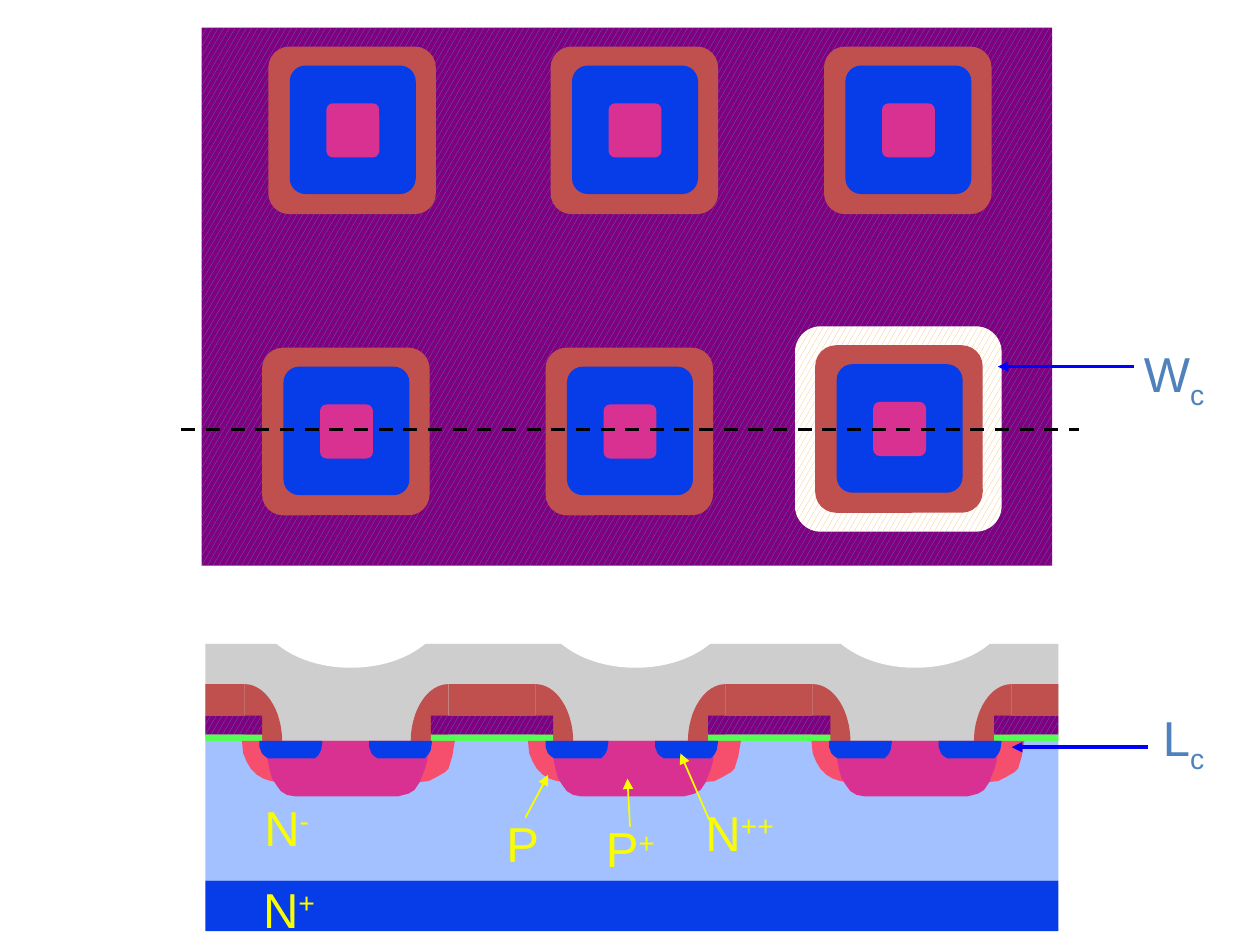
from math import cos, pi, sin

from lxml.etree import SubElement
from pptx import Presentation
from pptx.dml.color import RGBColor
from pptx.enum.dml import MSO_LINE, MSO_PATTERN
from pptx.enum.shapes import MSO_CONNECTOR, MSO_SHAPE
from pptx.enum.text import MSO_AUTO_SIZE
from pptx.oxml.ns import qn
from pptx.util import Inches, Pt

# The slide is a grid of 100 columns by 75 rows
COLUMNS, ROWS = 100, 75
WIDTH, HEIGHT = Inches(10), Inches(7.5)

OXIDE, POLY, POLY_SPECK = "C0504D", "800080", "4F81BD"
BLUE, PINK, BODY, GATE_OXIDE = "063DE8", "D93192", "F64F6D", "52FF52"
EPITAXY, METAL, WHITE = "A2C1FE", "CECECE", "FFFFFF"
YELLOW, STEEL, ARROW_BLUE = "FAFD00", "4F81BD", "0000FF"

SURFACE = 58.8  # row of the silicon surface
SPACER = 3  # columns of a rounded oxide edge
SPACER_OVERLAP = 1.4  # columns of that edge that lie above the gate

# Outlines of the diffusions, from their top left corner
BODY_OUTLINE = [(0, 0), (0.1, 1), (0.4, 1.7), (0.7, 2.2), (1.2, 2.7), (1.7, 3),
                (2.3, 3.2), (3.1, 3.3), (13.7, 3.3), (14.8, 3.2), (15.4, 2.9),
                (16.1, 2.5), (16.4, 2.2), (16.7, 1.2), (16.8, 0.6), (16.9, 0)]
DEEP_OUTLINE = [(0, 0), (0.1, 1.3), (0.3, 2.3), (0.5, 3), (0.9, 3.6), (1.2, 4),
                (1.7, 4.3), (2.3, 4.4), (10.5, 4.4), (11.3, 4.2), (11.8, 3.9),
                (12.2, 3.3), (12.6, 2.3), (12.8, 1.6), (12.9, 0)]
SOURCE_OUTLINE = [(0, 0), (0, 0.5), (0.2, 1), (0.4, 1.2), (0.7, 1.4), (0.9, 1.4),
                  (4.1, 1.4), (4.4, 1.4), (4.7, 1.1), (4.9, 0.7), (5, 0)]


def x(columns):
    return round(WIDTH * columns / COLUMNS)


def y(rows):
    return round(HEIGHT * rows / ROWS)


def color(value):
    return RGBColor.from_string(value)


def paint(shape, fill, speck=None):
    shape.shadow.inherit = False
    shape.line.fill.background()
    if speck:
        shape.fill.patterned()
        shape.fill.pattern = MSO_PATTERN.LARGE_CONFETTI
        shape.fill.fore_color.rgb = color(speck)
        shape.fill.back_color.rgb = color(fill)
    else:
        shape.fill.solid()
        shape.fill.fore_color.rgb = color(fill)


def add_block(page, left, top, width, height, fill, speck=None, kind=MSO_SHAPE.RECTANGLE):
    block = page.shapes.add_shape(kind, x(left), y(top), x(width), y(height))
    if kind == MSO_SHAPE.ROUNDED_RECTANGLE:
        block.adjustments[0] = 0.125
    paint(block, fill, speck)


def add_outline(page, left, top, points, fill):
    corners = [(x(left + across), y(top + down)) for across, down in points]
    builder = page.shapes.build_freeform(*corners[0])
    builder.add_line_segments(corners[1:], close=True)
    paint(builder.convert_to_shape(), fill)


def add_spacer(page, center, side):
    """A quarter ellipse of oxide; side is -1 to the left of center, 1 to the right."""
    steps = 16
    angles = [pi / 2 * step / steps for step in range(steps + 1)]
    curve = [(side * SPACER * sin(a), -4.6 * cos(a)) for a in angles]
    add_outline(page, center, 58.9, curve + [(0, 0)], OXIDE)


def add_line(page, start, end, line_color, points, dashed=False):
    """A dashed line is plain; any other ends in an arrowhead."""
    line = page.shapes.add_connector(
        MSO_CONNECTOR.STRAIGHT, x(start[0]), y(start[1]), x(end[0]), y(end[1]))
    line.line.color.rgb = color(line_color)
    line.line.width = Pt(points)
    if dashed:
        line.line.dash_style = MSO_LINE.DASH
    else:
        SubElement(line.line._get_or_add_ln(), qn("a:tailEnd"), type="triangle")
    SubElement(line._element.spPr, qn("a:effectLst"))


def add_label(page, left, top, width, letter, mark, raise_by, text_color):
    box = page.shapes.add_textbox(x(left), y(top), x(width), y(5.7))
    box.text_frame.word_wrap = False
    box.text_frame.auto_size = MSO_AUTO_SIZE.SHAPE_TO_FIT_TEXT
    para = box.text_frame.paragraphs[0]
    para.font.size = Pt(28)
    para.font.name = "Arial"
    para.font.color.rgb = color(text_color)
    para.add_run().text = letter
    if mark:
        span = para.add_run()
        span.text = mark
        span._r.get_or_add_rPr().set("baseline", str(raise_by * 1000))


def add_gate(page, left, width, rising, falling):
    """Polysilicon on gate oxide, under oxide with rounded edges where it ends."""
    cover_left = left + SPACER_OVERLAP * rising
    cover_right = left + width - SPACER_OVERLAP * falling
    if rising:
        add_spacer(page, cover_left, -1)
    if falling:
        add_spacer(page, cover_right, 1)
    add_block(page, cover_left, 54.3, cover_right - cover_left, 2.5, OXIDE)
    add_block(page, left, 56.8, width, 1.5, POLY, POLY_SPECK)
    add_block(page, left, 58.3, width, 0.5, GATE_OXIDE)


def add_cell(page, left, top):
    for across, down, width, height, fill in (
            (0, 0, 13.3, 13.3, OXIDE), (1.7, 1.5, 10, 10.2, BLUE),
            (4.6, 4.5, 4.2, 4.3, PINK)):
        add_block(page, left + across, top + down, width, height, fill,
                  kind=MSO_SHAPE.ROUNDED_RECTANGLE)


def add_well(page, left):
    add_outline(page, left, SURFACE, BODY_OUTLINE, BODY)
    add_outline(page, left + 1.9, SURFACE, DEEP_OUTLINE, PINK)
    for across in (1.4, 10.1):
        add_outline(page, left + across, SURFACE, SOURCE_OUTLINE, BLUE)


def main():
    deck = Presentation()
    deck.slide_width, deck.slide_height = WIDTH, HEIGHT
    page = deck.slides.add_slide(deck.slide_layouts[6])

    # Cross-section: layers, gates and the dips in the metal
    for top, height, fill in ((SURFACE, 11.1, EPITAXY), (51.1, 7.7, METAL), (69.9, 4, BLUE)):
        add_block(page, 16.3, top, 67.7, height, fill)
    for left, width, rising, falling in (
            (34.2, 9.7, True, True), (56.2, 9.7, True, True),
            (16.3, 4.5, False, True), (78.9, 5.1, True, False)):
        add_gate(page, left, width, rising, falling)
    for left in (20.3, 42.9, 65.1):
        add_block(page, left, 42.9, 15.1, 10.1, WHITE, kind=MSO_SHAPE.OVAL)

    # Plan view: polysilicon, one channel ring and the cells
    add_block(page, 16, 2.2, 67.5, 42.7, POLY, POLY_SPECK)
    add_block(page, 63.1, 25.9, 16.4, 16.3, WHITE, "F6BF69", MSO_SHAPE.ROUNDED_RECTANGLE)
    for left, top in ((20.8, 27.6), (43.3, 27.6), (64.7, 27.4),
                      (21.3, 3.7), (43.7, 3.7), (65.4, 3.7)):
        add_cell(page, left, top)
    add_line(page, (14.4, 34.1), (85.6, 34.1), "000000", 2, dashed=True)

    # Diffusions of the cross-section
    for left in (19.2, 41.9, 64.4):
        add_well(page, left)

    # Labels and their arrows
    for left, top, width, letter, mark, raise_by, text_color in (
            (55, 63.2, 7.9, "N", "++", 30, YELLOW),
            (39.2, 64.1, 4.5, "P", "", 0, YELLOW),
            (47.1, 64.5, 6.2, "P", "+", 30, YELLOW),
            (20, 62.8, 5.7, "N", "-", 30, YELLOW),
            (19.9, 69.3, 6.4, "N", "+", 30, YELLOW),
            (89.8, 26.8, 7, "W", "c", -25, STEEL),
            (91.3, 55.7, 5.5, "L", "c", -25, STEEL)):
        add_label(page, left, top, width, letter, mark, raise_by, text_color)
    for start, end, line_color, points in (
            ((41.7, 64.9), (43.5, 61.5), YELLOW, 1),
            ((56.3, 65.1), (54, 59.8), YELLOW, 1),
            ((50, 65.6), (49.8, 61.8), YELLOW, 1),
            ((90, 29.1), (79.2, 29.1), ARROW_BLUE, 2),
            ((91.1, 59.3), (80.3, 59.3), ARROW_BLUE, 2)):
        add_line(page, start, end, line_color, points)

    deck.save("out.pptx")


if __name__ == "__main__":
    main()
